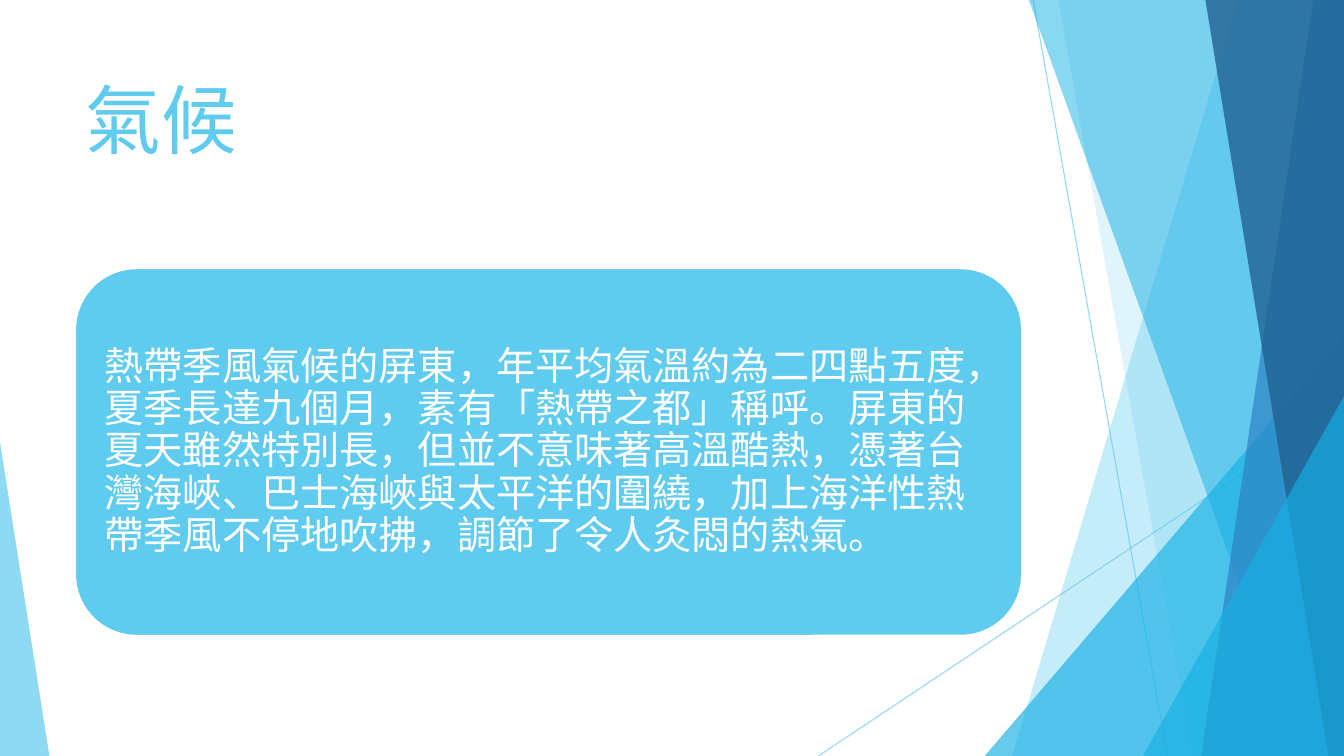
"""Build the climate slide with its faceted blue border."""
from lxml import etree
from pptx import Presentation
from pptx.dml.color import RGBColor
from pptx.enum.shapes import MSO_CONNECTOR, MSO_SHAPE
from pptx.enum.text import MSO_ANCHOR, PP_ALIGN
from pptx.oxml.ns import qn
from pptx.util import Pt

SKY = RGBColor(0x5F, 0xCB, 0xEF)
CYAN = RGBColor(0x17, 0xB0, 0xE4)
BLUE = RGBColor(0x2E, 0x83, 0xC3)
NAVY = RGBColor(0x22, 0x62, 0x92)
WHITE = RGBColor(0xFF, 0xFF, 0xFF)
FONT = "Roboto"
WIDE, HIGH = 960, 540


def fade(fill, alpha):
    color = fill._xPr.find(".//" + qn("a:srgbClr"))
    etree.SubElement(color, qn("a:alpha")).set("val", str(alpha * 1000))


def write(para, text, size, color):
    run = para.add_run()
    run.text = text
    run.font.size = Pt(size)
    run.font.name = FONT
    run.font.color.rgb = color


deck = Presentation()
deck.slide_width, deck.slide_height = Pt(WIDE), Pt(HIGH)
slide = deck.slides.add_slide(deck.slide_layouts[6])
shapes = slide.shapes

for ends in [(738, 0, 834, HIGH), (WIDE, 290, 584.6, HIGH)]:
    line = shapes.add_connector(MSO_CONNECTOR.STRAIGHT, *map(Pt, ends))
    line.line.width = Pt(0.75)
    line.line.color.rgb = SKY
    fade(line.line.fill, 70)
    etree.SubElement(line._element.spPr, qn("a:effectLst"))

facets = [
    ("band", 884.2, 723, SKY, 36),
    ("band", 756, 852, SKY, 20),
    ("right", 703.4, 240, CYAN, 66),
    ("band", 735, 929.5, CYAN, 50),
    ("band", 938, 858, BLUE, 70),
    ("band", 861, 949, NAVY, 80),
    ("right", 816.5, 283, CYAN, 66),
    ("left", 35.3, 316, SKY, 70),
]
for kind, first, second, color, alpha in facets:
    if kind == "band":
        pen = shapes.build_freeform(Pt(first), 0, scale=1.0)
        corners = [(WIDE, 0), (WIDE, HIGH), (second, HIGH)]
        pen.add_line_segments([(Pt(x), Pt(y)) for x, y in corners])
        facet = pen.convert_to_shape()
    else:
        left, right = (first, WIDE) if kind == "right" else (0, first)
        facet = shapes.add_shape(MSO_SHAPE.ISOSCELES_TRIANGLE, Pt(left),
                                 Pt(second), Pt(right - left), Pt(HIGH - second))
        facet.adjustments[0] = 1 if kind == "right" else 0
    facet.shadow.inherit = False
    facet.line.fill.background()
    facet.fill.solid()
    facet.fill.fore_color.rgb = color
    fade(facet.fill, alpha)

card = shapes.add_shape(MSO_SHAPE.ROUNDED_RECTANGLE, Pt(53.6), Pt(191.6),
                        Pt(676.5), Pt(262.6))
card.shadow.inherit = False
card.fill.solid()
card.fill.fore_color.rgb = SKY
card.line.color.rgb = WHITE
card.line.width = Pt(1.5)
frame = card.text_frame
frame.word_wrap = True
frame.vertical_anchor = MSO_ANCHOR.MIDDLE
frame.margin_left = frame.margin_right = Pt(8.4)
frame.margin_top = frame.margin_bottom = Pt(8.4)
body = frame.paragraphs[0]
body.alignment = PP_ALIGN.LEFT
body.line_spacing = 0.9
write(body, "熱帶季風氣候的屏東，年平均氣溫約為二四點五度，夏季長達九個月，"
      "素有「熱帶之都」稱呼。屏東的夏天雖然特別長，但並不意味著高溫酷熱，"
      "憑著台灣海峽、巴士海峽與太平洋的圍繞，加上海洋性熱帶季風不停地吹拂，"
      "調節了令人灸悶的熱氣。", 28, WHITE)

title = shapes.add_textbox(Pt(53.3), Pt(48.2), Pt(123.8), Pt(72.7))
title.text_frame.word_wrap = False
head = title.text_frame.paragraphs[0]
head.alignment = PP_ALIGN.CENTER
write(head, "氣候", 54, SKY)

deck.save("out.pptx")
